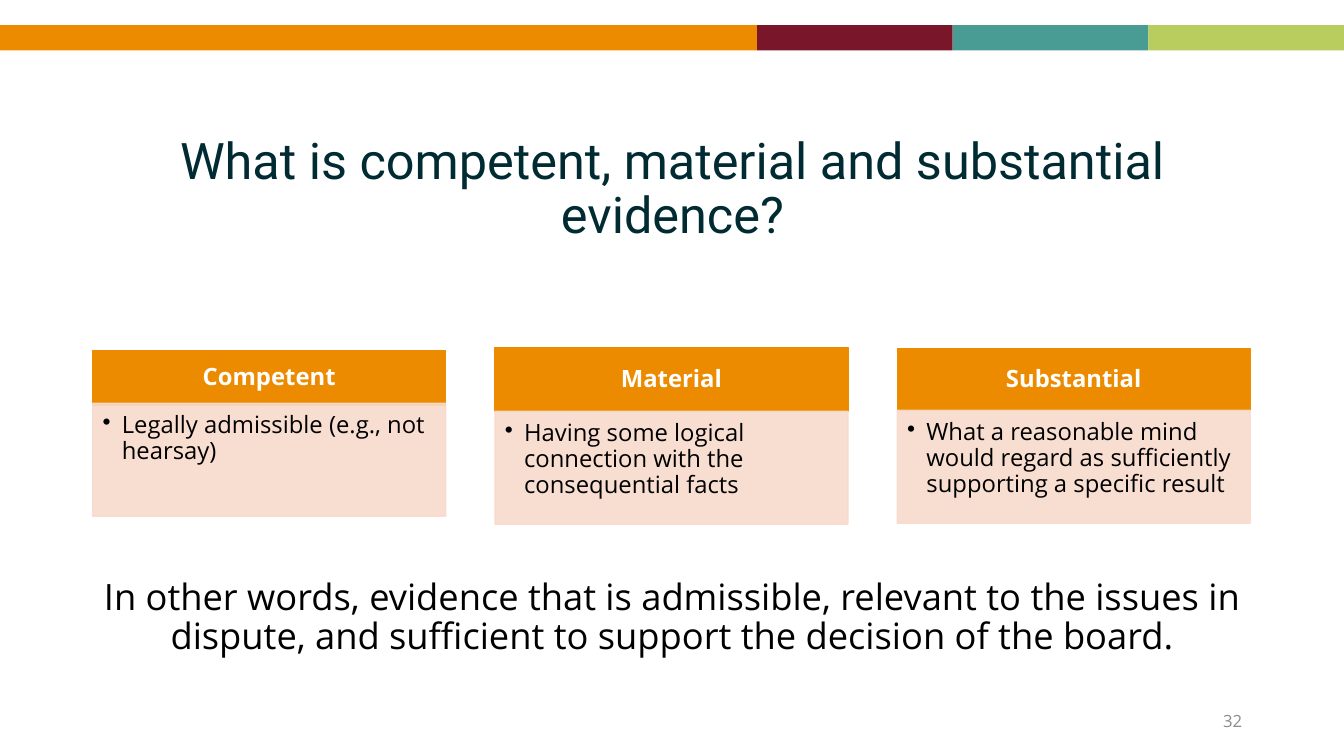
from pptx import Presentation
from pptx.dml.color import RGBColor
from pptx.enum.shapes import MSO_SHAPE as Shape
from pptx.enum.text import MSO_ANCHOR as Anchor, PP_ALIGN as Align
from pptx.oxml.ns import qn
from pptx.util import Inches, Pt
from lxml.etree import SubElement as Sub

ORANGE = RGBColor(0xED, 0x8B, 0x00)
WINE = RGBColor(0x79, 0x16, 0x2A)
TEAL = RGBColor(0x49, 0x9C, 0x94)
LIME = RGBColor(0xB8, 0xCD, 0x5E)
PEACH = RGBColor(0xF8, 0xDA, 0xCC)
NAVY = RGBColor(0x01, 0x2B, 0x32)
GREY = RGBColor(0x8C, 0x8C, 0x8C)
BLACK = RGBColor(0, 0, 0)
WHITE = RGBColor(255, 255, 255)


class Deck:
    face = "Open Sans"
    inset = (0.1, 0.05, 0.1, 0.05)

    def __init__(self, prs):
        self.slide = prs.slides.add_slide(prs.slide_layouts[6])

    def rect(self, box, color, alpha=None, line=True):
        shape = self.slide.shapes.add_shape(Shape.RECTANGLE, *map(Inches, box))
        shape.shadow.inherit = False
        shape.fill.solid()
        shape.fill.fore_color.rgb = color
        if line:
            shape.line.color.rgb = color
            shape.line.width = Pt(1)
        else:
            shape.line.fill.background()
        if alpha:
            for clr in shape.element.spPr.iter(qn("a:srgbClr")):
                Sub(clr, qn("a:alpha")).set("val", str(alpha * 1000))
        return shape

    def label(self, box, words, **style):
        shape = self.slide.shapes.add_textbox(*map(Inches, box))
        self.letter(shape, words, **style)

    def letter(self, shape, words, size, color, align=Align.CENTER, space=0.9,
               anchor=Anchor.MIDDLE, inset=inset, bullet=None, **font):
        frame = shape.text_frame
        frame.word_wrap = True
        frame.vertical_anchor = anchor
        for side, gap in zip(("left", "top", "right", "bottom"), inset):
            setattr(frame, "margin_" + side, Inches(gap))
        para = frame.paragraphs[0]
        para.alignment, para.line_spacing = align, space
        if bullet:
            props = para._p.get_or_add_pPr()
            props.set("marL", str(Inches(bullet)))
            props.set("indent", str(-Inches(bullet)))
            Sub(props, qn("a:buChar")).set("char", "•")
        run = para.add_run()
        run.text = words
        run.font.color.rgb = color
        for key, val in {"name": self.face, "size": Pt(size), **font}.items():
            setattr(run.font, key, val)

    def card(self, left, top, split, high, head, body):
        bar = self.rect((left, top, 3.5, high), ORANGE)
        self.letter(bar, head, 17, WHITE, bold=True,
                    inset=(0.13, 0.08, 0.13, 0.08))
        panel = self.rect((left, split, 3.5, 1.12), PEACH, alpha=90)
        self.letter(panel, body, 17, BLACK, align=Align.LEFT, bullet=0.19,
                    anchor=Anchor.TOP, inset=(0.1, 0.1, 0.13, 0.15))


def main():
    prs = Presentation()
    prs.slide_width, prs.slide_height = Inches(13.33), Inches(7.5)
    deck = Deck(prs)

    # Colour band
    left = 0
    for wide, color in ((7.51, ORANGE), (1.94, WINE), (1.94, TEAL), (1.94, LIME)):
        deck.rect((left, 0.25, wide, 0.25), color, line=False)
        left += wide

    # Title
    deck.label((0.92, 1.16, 11.5, 1.45),
               "What is competent, material and substantial evidence?",
               size=36, color=NAVY, name="Roboto")

    # Cards: top, split and head height, then wording
    cards = (
        (3.48, 4.0, 0.54, "Competent", "Legally admissible (e.g., not hearsay)"),
        (3.45, 4.08, 0.63, "Material",
         "Having some logical connection with the consequential facts"),
        (3.46, 4.07, 0.61, "Substantial",
         "What a reasonable mind would regard as sufficiently supporting "
         "a specific result"),
    )
    for col, card in enumerate(cards):
        deck.card(0.92 + col * 3.99, *card)

    # Summary and page number
    deck.label((0.92, 5.63, 11.5, 1),
               "In other words, evidence that is admissible, relevant to the "
               "issues in dispute, and sufficient to support the decision of "
               "the board.", size=25.9, color=BLACK)
    deck.label((9.42, 6.95, 3, 0.4), "32", size=12, color=GREY,
               align=Align.RIGHT, space=1)

    prs.save("out.pptx")


if __name__ == "__main__":
    main()
